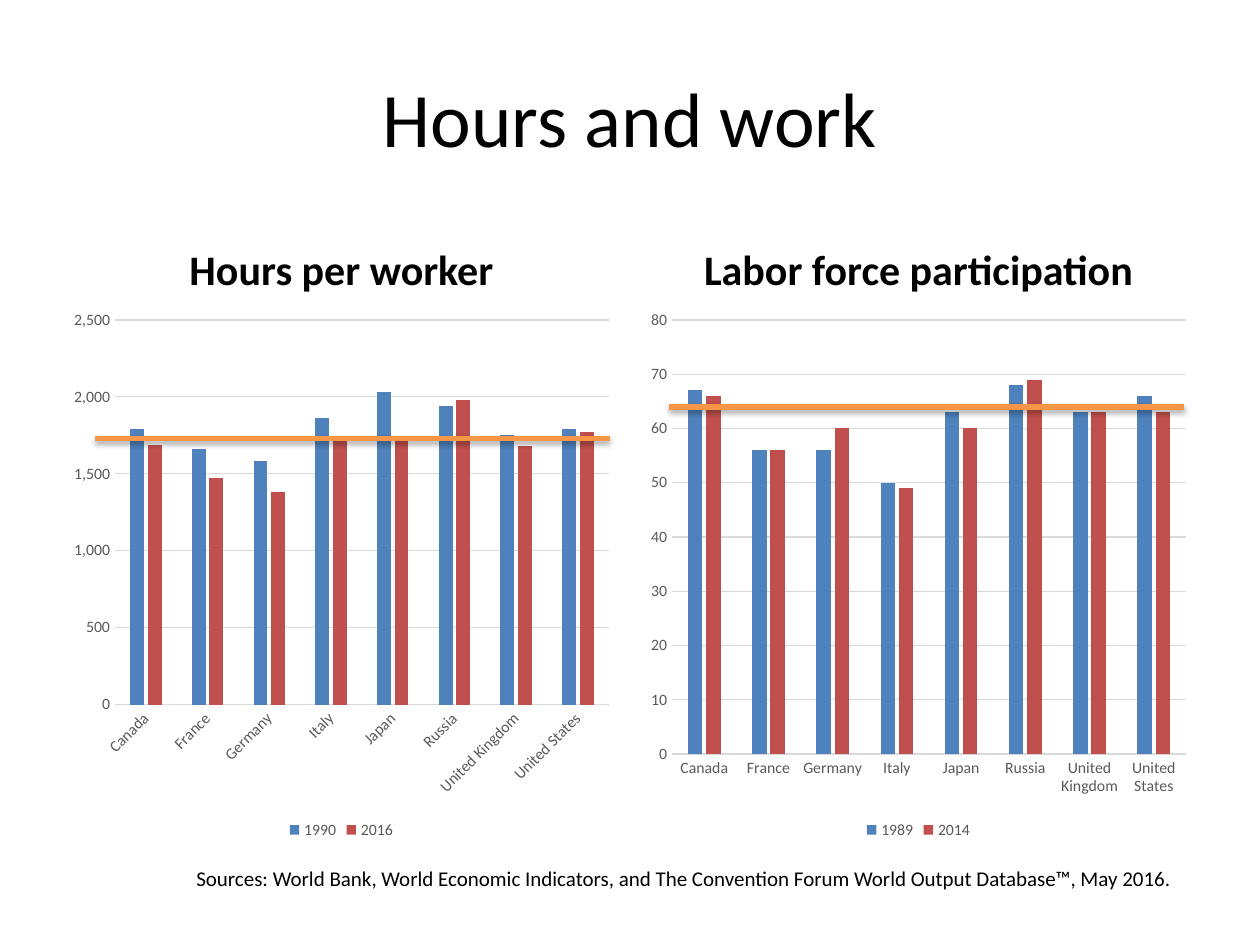
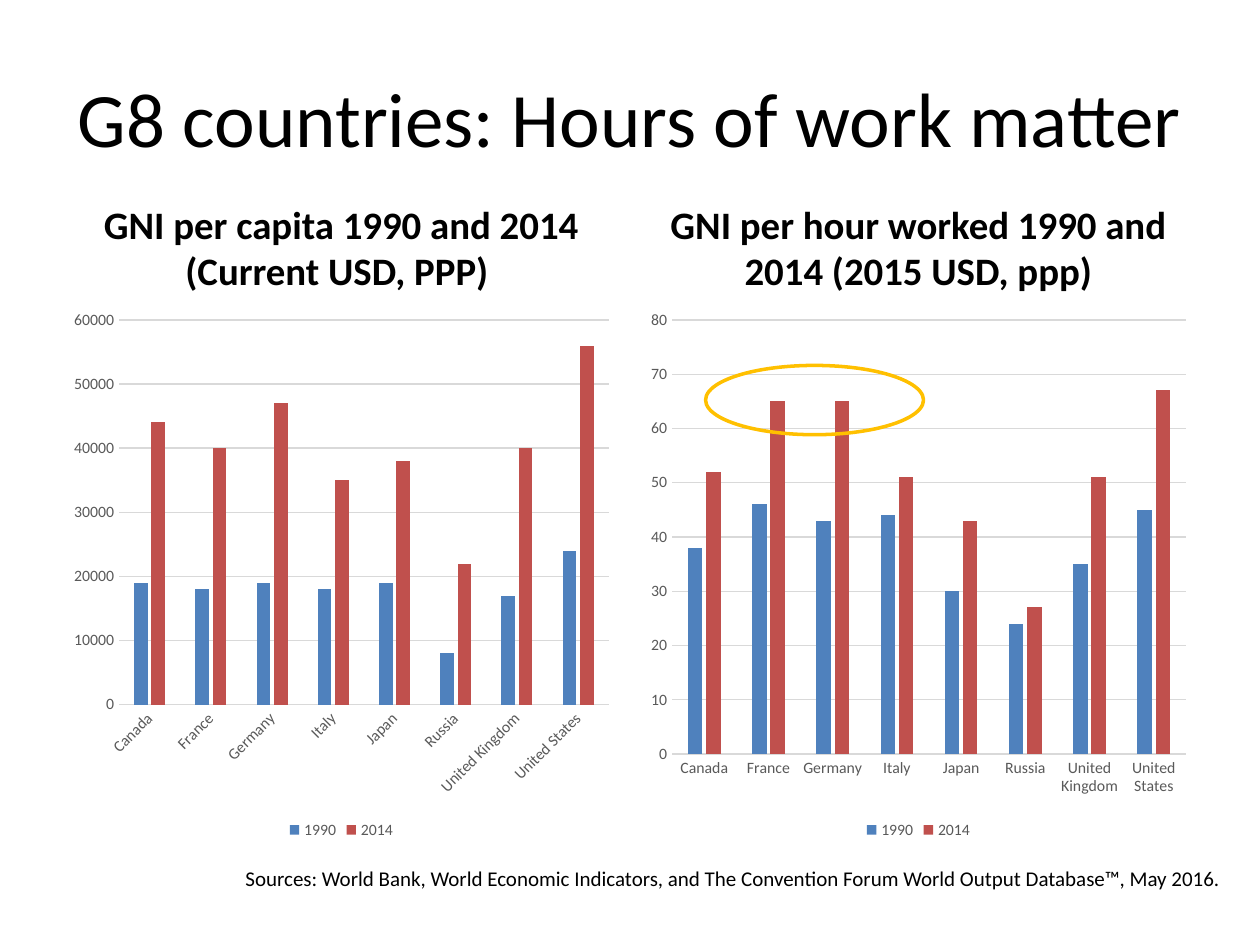
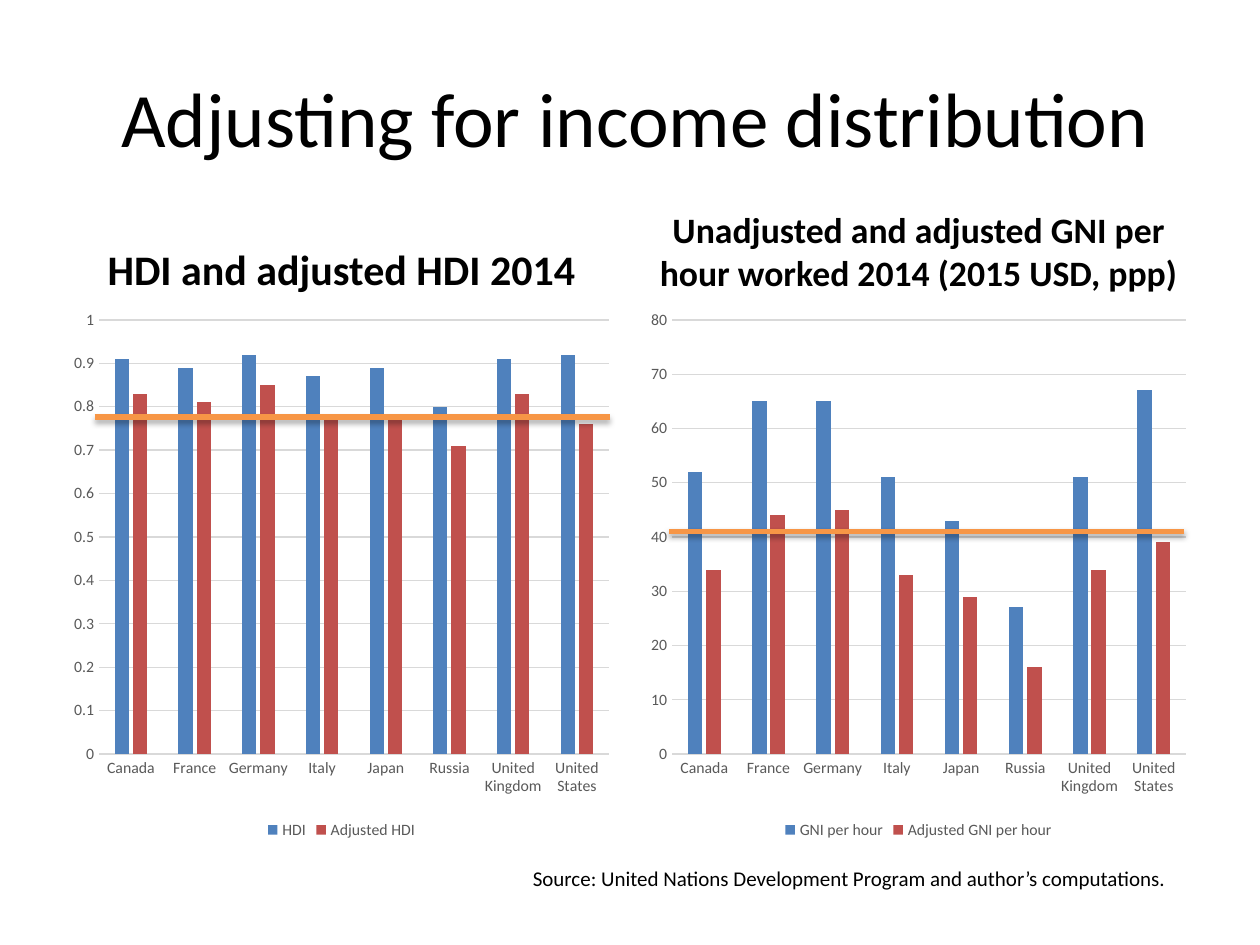
"""Build three slides comparing hours, work and income in the G8 countries."""
import lxml.etree
import pptx
import pptx.chart.data
import pptx.dml.color
import pptx.enum.chart
import pptx.enum.shapes
import pptx.enum.text
import pptx.oxml
import pptx.oxml.ns
import pptx.util

PX = 9144
FONT = "Calibri"
BLACK = pptx.dml.color.RGBColor(0x00, 0x00, 0x00)
GREY = pptx.dml.color.RGBColor(0x59, 0x59, 0x59)
GRID = pptx.dml.color.RGBColor(0xD9, 0xD9, 0xD9)
BLUE = pptx.dml.color.RGBColor(0x4F, 0x81, 0xBD)
RED = pptx.dml.color.RGBColor(0xC0, 0x50, 0x4D)
ORANGE = pptx.dml.color.RGBColor(0xF7, 0x96, 0x46)
GOLD = pptx.dml.color.RGBColor(0xFF, 0xC0, 0x00)

LEFT, RIGHT, COLUMN_WIDTH = 50, 508, 442
LEFT_LINE, RIGHT_LINE, LINE_WIDTH = 75, 531, 409
COUNTRIES = ["Canada", "France", "Germany", "Italy", "Japan", "Russia",
             "United Kingdom", "United States"]
GNI_PER_HOUR_2014 = [52, 65, 65, 51, 43, 27, 51, 67]
HOURS_SOURCES = ("Sources: World Bank, World Economic Indicators, and The Convention Forum "
                 "World Output Database™, May 2016.")
HDI_SOURCE = "Source: United Nations Development Program and author’s computations."

SHADOW = (
    f'<a:effectLst {pptx.oxml.ns.nsdecls("a")}>'
    '<a:outerShdw blurRad="40000" dist="23000" dir="5400000" rotWithShape="0">'
    '<a:srgbClr val="000000"><a:alpha val="35000"/></a:srgbClr>'
    '</a:outerShdw></a:effectLst>')


class Deck:
    """Hold the shared style and the slide being filled."""

    def __init__(self):
        self.presentation = pptx.Presentation()
        self.presentation.slide_width = 1000 * PX
        self.presentation.slide_height = 750 * PX
        self.slide = None

    def start(self, title, left=50, width=900):
        """Add a slide with its title."""
        self.slide = self.presentation.slides.add_slide(self.presentation.slide_layouts[6])
        self.text(title, (left, 30, width, 125), 44, pptx.enum.text.MSO_ANCHOR.MIDDLE)

    def text(self, words, box, size, anchor=pptx.enum.text.MSO_ANCHOR.TOP,
             align=pptx.enum.text.PP_ALIGN.CENTER, bold=False, wrap=True):
        """Add a text box and return its frame."""
        frame = self.slide.shapes.add_textbox(*(n * PX for n in box)).text_frame
        frame.word_wrap = wrap
        frame.vertical_anchor = anchor
        paragraph = frame.paragraphs[0]
        paragraph.alignment = align
        run = paragraph.add_run()
        run.text = words
        self.style(run.font, size, BLACK)
        run.font.bold = bold
        return frame

    def style(self, font, size, color):
        """Apply the shared typeface."""
        font.name = FONT
        font.size = pptx.util.Pt(size)
        font.color.rgb = color

    def source(self, words, left, width):
        """Add the source line at the foot."""
        frame = self.text(words, (left, 682, width, 30), 12,
                          align=pptx.enum.text.PP_ALIGN.LEFT, wrap=False)
        frame.auto_size = pptx.enum.text.MSO_AUTO_SIZE.SHAPE_TO_FIT_TEXT

    def comparison(self, left, heading, series, top, step, size=24, number_format="General"):
        """Add a heading above a clustered column chart."""
        self.text(heading, (left, 168, COLUMN_WIDTH, 70), size,
                  pptx.enum.text.MSO_ANCHOR.BOTTOM, bold=True)
        data = pptx.chart.data.CategoryChartData(number_format=number_format)
        data.categories = COUNTRIES
        for name, values in series.items():
            data.add_series(name, values)
        chart = self.slide.shapes.add_chart(
            pptx.enum.chart.XL_CHART_TYPE.COLUMN_CLUSTERED,
            left * PX, 238 * PX, COLUMN_WIDTH * PX, 432 * PX, data).chart
        self.style(chart.font, 10, BLACK)
        chart.has_title = False
        chart.has_legend = True
        chart.legend.position = pptx.enum.chart.XL_LEGEND_POSITION.BOTTOM
        chart.legend.include_in_layout = False
        self.style(chart.legend.font, 9, GREY)

        columns = chart.plots[0]
        columns.gap_width = 219
        columns.overlap = -27
        columns.vary_by_categories = False
        for bars, color in zip(columns.series, (BLUE, RED)):
            bars.format.fill.solid()
            bars.format.fill.fore_color.rgb = color
            bars.invert_if_negative = False

        countries, amounts = chart.category_axis, chart.value_axis
        for axis in (countries, amounts):
            axis.major_tick_mark = axis.minor_tick_mark = pptx.enum.chart.XL_TICK_MARK.NONE
            self.style(axis.tick_labels.font, 9, GREY)
            axis._element.txPr.bodyPr.set("rot", "-60000000")
        amounts.minimum_scale, amounts.maximum_scale, amounts.major_unit = 0, top, step
        amounts.tick_labels.number_format = number_format
        amounts.tick_labels.number_format_is_linked = False
        amounts.format.line.fill.background()
        for line in (countries.format.line, amounts.major_gridlines.format.line):
            line.color.rgb = GRID
            line.width = pptx.util.Pt(0.75)

    def level(self, left, y):
        """Add a shadowed reference line across a chart."""
        line = self.slide.shapes.add_connector(
            pptx.enum.shapes.MSO_CONNECTOR.STRAIGHT,
            left * PX, y * PX, (left + LINE_WIDTH) * PX, y * PX)
        line.line.color.rgb = ORANGE
        line.line.width = pptx.util.Pt(3)
        line._element.spPr.append(pptx.oxml.parse_xml(SHADOW))

    def ring(self, left, top, width, height):
        """Add an open ellipse around some bars."""
        ellipse = self.slide.shapes.add_shape(
            pptx.enum.shapes.MSO_SHAPE.OVAL, left * PX, top * PX, width * PX, height * PX)
        ellipse.shadow.inherit = False
        ellipse.fill.background()
        ellipse.line.color.rgb = GOLD
        ellipse.line.width = pptx.util.Pt(2)


def main():
    """Fill the three slides and save them."""
    deck = Deck()

    deck.start("Hours and work")
    deck.comparison(LEFT, "Hours per worker", {
        "1990": [1790, 1660, 1580, 1860, 2030, 1940, 1750, 1790],
        "2016": [1690, 1470, 1380, 1730, 1730, 1980, 1680, 1770],
    }, 2500, 500, number_format="#,##0")
    deck.comparison(RIGHT, "Labor force participation", {
        "1989": [67, 56, 56, 50, 63, 68, 63, 66],
        "2014": [66, 56, 60, 49, 60, 69, 63, 63],
    }, 80, 10, number_format="0")
    deck.source(HOURS_SOURCES, 146, 807)
    deck.level(LEFT_LINE, 348)
    deck.level(RIGHT_LINE, 323)

    deck.start("G8 countries: Hours of work matter")
    deck.comparison(LEFT, "GNI per capita 1990 and 2014 (Current USD, PPP) ", {
        "1990": [19000, 18000, 19000, 18000, 19000, 8000, 17000, 24000],
        "2014": [44000, 40000, 47000, 35000, 38000, 22000, 40000, 56000],
    }, 60000, 10000, size=22.2)
    deck.comparison(RIGHT, "GNI per hour worked 1990 and 2014 (2015 USD, ppp)", {
        "1990": [38, 46, 43, 44, 30, 24, 35, 45],
        "2014": GNI_PER_HOUR_2014,
    }, 80, 10, size=22.2, number_format="#,##0")
    deck.source(HOURS_SOURCES, 185, 807)
    deck.ring(560, 290, 173, 55)

    deck.start("Adjusting for income distribution", left=28, width=953)
    deck.comparison(LEFT, "HDI and adjusted HDI 2014", {
        "HDI": [0.91, 0.89, 0.92, 0.87, 0.89, 0.8, 0.91, 0.92],
        "Adjusted HDI": [0.83, 0.81, 0.85, 0.77, 0.78, 0.71, 0.83, 0.76],
    }, 1, 0.1)
    deck.comparison(RIGHT, "Unadjusted and adjusted GNI per hour worked 2014 (2015 USD, ppp)", {
        "GNI per hour": GNI_PER_HOUR_2014,
        "Adjusted GNI per hour": [34, 44, 45, 33, 29, 16, 34, 39],
    }, 80, 10, size=20.4, number_format="#,##0")
    deck.source(HDI_SOURCE, 413, 529)
    deck.level(LEFT_LINE, 331)
    deck.level(RIGHT_LINE, 422)

    deck.presentation.save("out.pptx")


if __name__ == "__main__":
    main()
